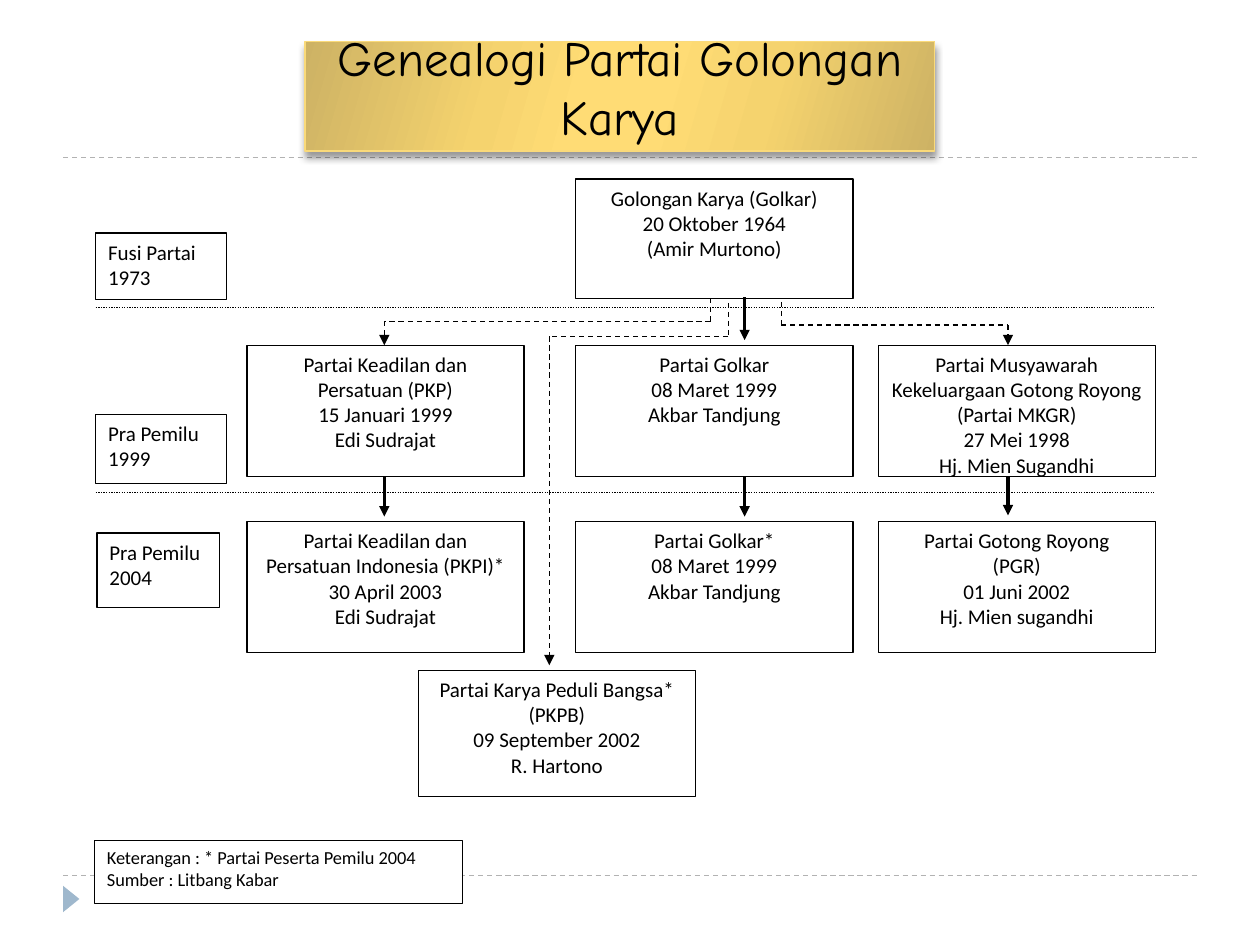
import pptx
import pptx.util
import pptx.dml.color
import pptx.enum.dml
import pptx.enum.shapes
import pptx.enum.text
import pptx.oxml
import pptx.oxml.ns
from lxml import etree

Inches, Pt = pptx.util.Inches, pptx.util.Pt
ALIGN = pptx.enum.text.PP_ALIGN
ANCHOR = pptx.enum.text.MSO_ANCHOR
DASH = pptx.enum.dml.MSO_LINE
SHAPE = pptx.enum.shapes.MSO_SHAPE

COLORS = {"ink": "000000", "paper": "FFFFFF", "rule": "B2B2B2", "marker": "9FB8CD",
          "gold_edge": "FADA7A"}
GOLD_STOPS = [(0, "CDB264"), (30, "F5D36E"), (45, "FFDC75"),
              (55, "FFDC75"), (73, "F5D36E"), (100, "CDB264")]

TITLE = "Genealogi Partai Golongan Karya"
COLUMNS = {"left": 1.96, "fork": 3.32, "middle": 4.57, "right": 6.97}
ROWS = {"origin": (1.42, 0.95), "1999": (2.74, 1.04), "2004": (4.14, 1.04), "split": (5.32, 1)}
PARTY_WIDTH = 2.2
PARTIES = [
    ("middle", "origin", ["Golongan Karya (Golkar)", "20 Oktober 1964", "(Amir Murtono)"]),
    ("left", "1999", ["Partai Keadilan dan Persatuan (PKP)", "15 Januari 1999", "Edi Sudrajat"]),
    ("middle", "1999", ["Partai Golkar", "08 Maret 1999", "Akbar Tandjung"]),
    ("right", "1999", ["Partai Musyawarah Kekeluargaan Gotong Royong (Partai MKGR)",
                       "27 Mei 1998", "Hj. Mien Sugandhi"]),
    ("left", "2004", ["Partai Keadilan dan Persatuan Indonesia (PKPI)*",
                      "30 April 2003", "Edi Sudrajat"]),
    ("middle", "2004", ["Partai Golkar*", "08 Maret 1999", "Akbar Tandjung"]),
    ("right", "2004", ["Partai Gotong Royong", "(PGR)", "01 Juni 2002", "Hj. Mien sugandhi"]),
    ("fork", "split", ["Partai Karya Peduli Bangsa* (PKPB)", "09 September 2002", "R. Hartono"]),
]
PERIODS = [
    ("Fusi Partai 1973", (0.76, 1.85, 1.04, 0.53)),
    ("Pra Pemilu 1999", (0.76, 3.29, 1.04, 0.55)),
    ("Pra Pemilu 2004", (0.77, 4.23, 0.97, 0.59)),
]
NOTE = ["Keterangan : * Partai Peserta Pemilu 2004", "Sumber : Litbang Kabar"]

SPLITS = [
    [(5.64, 2.15), (5.64, 2.55), (3.05, 2.55), (3.05, 2.74)],
    [(5.78, 2.26), (5.78, 2.67), (4.36, 2.67), (4.36, 5.28)],
    [(6.2, 2.18), (6.2, 2.58), (8, 2.58), (8, 2.74)],
]
SUCCESSIONS = [(5.91, 2.36, 2.7), (3.05, 3.78, 4.1), (5.91, 3.78, 4.1), (8, 3.78, 4.09)]
PERIOD_RULES = [2.44, 3.91]
FRAME_RULES = [1.25, 6.95]

deck = pptx.Presentation()
deck.slide_width, deck.slide_height = Inches(10), Inches(7.5)
slide = deck.slides.add_slide(deck.slide_layouts[6])


def rgb(name):
    return pptx.dml.color.RGBColor.from_string(COLORS[name])


def add_line(start, end, color="ink", width=0.75, dash=None, arrow=False):
    line = slide.shapes.add_connector(
        pptx.enum.shapes.MSO_CONNECTOR.STRAIGHT, *map(Inches, start + end))
    line.line.color.rgb = rgb(color)
    line.line.width = Pt(width)
    if dash:
        line.line.dash_style = dash
    if arrow:
        etree.SubElement(line.line._get_or_add_ln(), pptx.oxml.ns.qn("a:tailEnd"),
                         type="triangle")
    etree.SubElement(line._element.spPr, pptx.oxml.ns.qn("a:effectLst"))


def add_box(place, lines, size=12, align=ALIGN.LEFT, font="Calibri",
            edge="ink", anchor=ANCHOR.TOP):
    box = slide.shapes.add_shape(SHAPE.RECTANGLE, *map(Inches, place))
    box.shadow.inherit = False
    box.fill.solid()
    box.fill.fore_color.rgb = rgb("paper")
    box.line.color.rgb = rgb(edge)
    box.line.width = Pt(0.75)
    frame = box.text_frame
    frame.word_wrap = True
    frame.vertical_anchor = anchor
    frame.text = "\n".join(lines)
    for paragraph in frame.paragraphs:
        paragraph.alignment = align
        for run in paragraph.runs:
            run.font.name = font
            run.font.size = Pt(size)
            run.font.color.rgb = rgb("ink")
    return box


def gild(box):
    namespace = pptx.oxml.ns.nsdecls("a")
    stops = "".join(f'<a:gs pos="{share * 1000}"><a:srgbClr val="{color}"/></a:gs>'
                    for share, color in GOLD_STOPS)
    gradient = pptx.oxml.parse_xml(
        f'<a:gradFill {namespace} rotWithShape="1"><a:gsLst>{stops}</a:gsLst>'
        f'<a:lin ang="{16 * 60000}" scaled="0"/></a:gradFill>')
    shadow = pptx.oxml.parse_xml(
        f'<a:effectLst {namespace}><a:outerShdw blurRad="{Pt(4)}" dist="{Pt(3.4)}" '
        f'dir="{90 * 60000}" rotWithShape="0"><a:srgbClr val="{COLORS["ink"]}">'
        '<a:alpha val="40000"/></a:srgbClr></a:outerShdw></a:effectLst>')
    properties = box._element.spPr
    for tag, replacement in (("a:solidFill", gradient), ("a:effectLst", shadow)):
        properties.replace(properties.find(pptx.oxml.ns.qn(tag)), replacement)


for y in FRAME_RULES:
    add_line((0.5, y), (9.5, y), color="rule", dash=DASH.DASH)

marker = slide.shapes.add_shape(SHAPE.ISOSCELES_TRIANGLE, *map(Inches, (0.46, 7.07, 0.21, 0.13)))
marker.rotation = 90
marker.shadow.inherit = False
marker.fill.solid()
marker.fill.fore_color.rgb = rgb("marker")
marker.line.fill.background()

gild(add_box((2.42, 0.33, 5, 0.87), [TITLE], 28, ALIGN.CENTER, "Comic Neue",
             "gold_edge", ANCHOR.BOTTOM))
add_box((0.75, 6.67, 2.92, 0.5), NOTE, 10.5)

for y in PERIOD_RULES:
    add_line((0.76, y), (9.16, y), dash=DASH.ROUND_DOT)
for route in SPLITS:
    for start, end in zip(route, route[1:]):
        add_line(start, end, dash=DASH.DASH, arrow=end == route[-1])

for column, row, lines in PARTIES:
    top, height = ROWS[row]
    add_box((COLUMNS[column], top, PARTY_WIDTH, height), lines, align=ALIGN.CENTER)
for period, place in PERIODS:
    add_box(place, [period])
for x, top, bottom in SUCCESSIONS:
    add_line((x, top), (x, bottom), width=1.75, arrow=True)

deck.save("out.pptx")
